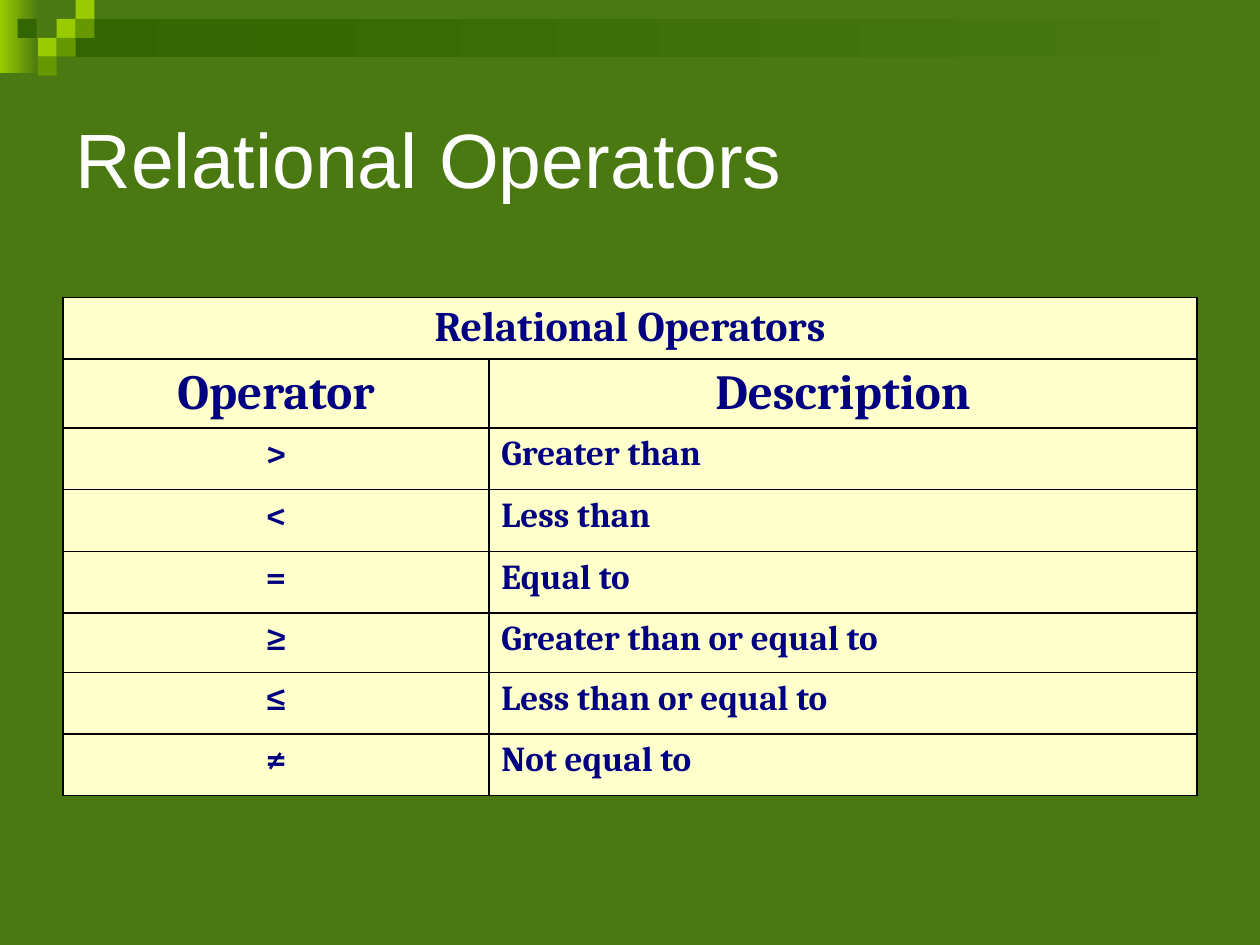
import pptx
import pptx.util
import pptx.dml.color
import pptx.enum.shapes
import pptx.enum.text
import pptx.oxml
import pptx.oxml.ns

Inches = pptx.util.Inches
Pt = pptx.util.Pt
ALIGN = pptx.enum.text.PP_ALIGN

COLORS = {
    "background": "4A7911", "lime": "99CC00", "leaf": "669900", "forest": "336600",
    "title": "FFFFFF", "cell": "FFFFCC", "text": "000080", "border": "000000",
}
TITLE = "Relational Operators"
TABLE_TITLE = "Relational Operators"
HEADERS = ("Operator", "Description")
OPERATORS = [
    (">", "Greater than"),
    ("<", "Less than"),
    ("=", "Equal to"),
    ("≥", "Greater than or equal to"),
    ("≤", "Less than or equal to"),
    ("≠", "Not equal to"),
]
COLUMN_WIDTHS = (3.38, 5.62)
ROW_HEIGHTS = (0.49, 0.49, 0.49, 0.49, 0.49, 0.47, 0.49, 0.49)

# left, top, width, height, start color
GRADIENT_BARS = [(0, 0, 0.31, 0.58, "lime"), (0.45, 0.15, 9.55, 0.3, "forest")]
SQUARE = 0.15
# left, top, color
SQUARES = [
    (0.45, 0.15, "lime"), (0.6, 0, "lime"), (0.6, 0.15, "leaf"), (0.3, 0.3, "lime"),
    (0.14, 0.15, "forest"), (0.45, 0.3, "leaf"), (0.3, 0.45, "leaf"),
]


def rgb(name):
    return pptx.dml.color.RGBColor.from_string(COLORS[name])


def add_rectangle(slide, left, top, width, height):
    shape = slide.shapes.add_shape(
        pptx.enum.shapes.MSO_SHAPE.RECTANGLE,
        Inches(left), Inches(top), Inches(width), Inches(height))
    shape.shadow.inherit = False
    shape.line.fill.background()
    return shape


def add_decoration(slide):
    for left, top, width, height, color in GRADIENT_BARS:
        fill = add_rectangle(slide, left, top, width, height).fill
        fill.gradient()
        fill.gradient_angle = 0
        for stop, name, position in zip(fill.gradient_stops, (color, "background"), (0, 1)):
            stop.color.rgb = rgb(name)
            stop.position = position
    for left, top, color in SQUARES:
        fill = add_rectangle(slide, left, top, SQUARE, SQUARE).fill
        fill.solid()
        fill.fore_color.rgb = rgb(color)


def add_run(paragraph, text, size, font, color, bold=False):
    run = paragraph.add_run()
    run.text = text
    run.font.size = Pt(size)
    run.font.name = font
    run.font.bold = bold
    run.font.color.rgb = rgb(color)


def format_title(title):
    title.left, title.top = Inches(0.5), Inches(0.5)
    title.width, title.height = Inches(9), Inches(1.5)
    title.text_frame.vertical_anchor = pptx.enum.text.MSO_ANCHOR.MIDDLE
    paragraph = title.text_frame.paragraphs[0]
    paragraph.alignment = ALIGN.LEFT
    add_run(paragraph, TITLE, 44, "Arial", "title")


def style_cell(cell):
    """Draw the four borders, then the fill, which must follow them in the XML."""
    properties = cell._tc.get_or_add_tcPr()
    for side in ("lnL", "lnR", "lnT", "lnB"):
        properties.append(pptx.oxml.parse_xml(
            f'<a:{side} {pptx.oxml.ns.nsdecls("a")} w="{Pt(1)}"><a:solidFill>'
            f'<a:srgbClr val="{COLORS["border"]}"/></a:solidFill></a:{side}>'))
    cell.fill.solid()
    cell.fill.fore_color.rgb = rgb("cell")


def write_cell(cell, text, size, alignment):
    paragraph = cell.text_frame.paragraphs[0]
    paragraph.alignment = alignment
    paragraph_properties = paragraph._p.get_or_add_pPr()
    paragraph_properties.set("marL", str(Inches(0.38)))
    paragraph_properties.set("indent", str(-Inches(0.38)))
    add_run(paragraph, text, size, "Cambria", "text", bold=True)


def add_operator_table(slide):
    table = slide.shapes.add_table(
        len(ROW_HEIGHTS), len(COLUMN_WIDTHS), Inches(0.5), Inches(2.36),
        Inches(sum(COLUMN_WIDTHS)), Inches(sum(ROW_HEIGHTS))).table
    for column, width in zip(table.columns, COLUMN_WIDTHS):
        column.width = Inches(width)
    for row, height in zip(table.rows, ROW_HEIGHTS):
        row.height = Inches(height)
        for cell in row.cells:
            style_cell(cell)

    table.cell(0, 0).merge(table.cell(0, 1))
    write_cell(table.cell(0, 0), TABLE_TITLE, 24, ALIGN.CENTER)
    for column, header in enumerate(HEADERS):
        write_cell(table.cell(1, column), header, 28, ALIGN.CENTER)
    for row, (operator, description) in enumerate(OPERATORS, start=2):
        write_cell(table.cell(row, 0), operator, 20, ALIGN.CENTER)
        write_cell(table.cell(row, 1), description, 20, ALIGN.LEFT)


def main():
    presentation = pptx.Presentation()
    presentation.slide_width, presentation.slide_height = Inches(10), Inches(7.5)
    slide = presentation.slides.add_slide(presentation.slide_layouts[5])
    slide.background.fill.solid()
    slide.background.fill.fore_color.rgb = rgb("background")
    add_decoration(slide)
    format_title(slide.shapes.title)
    add_operator_table(slide)
    presentation.save("out.pptx")


if __name__ == "__main__":
    main()
